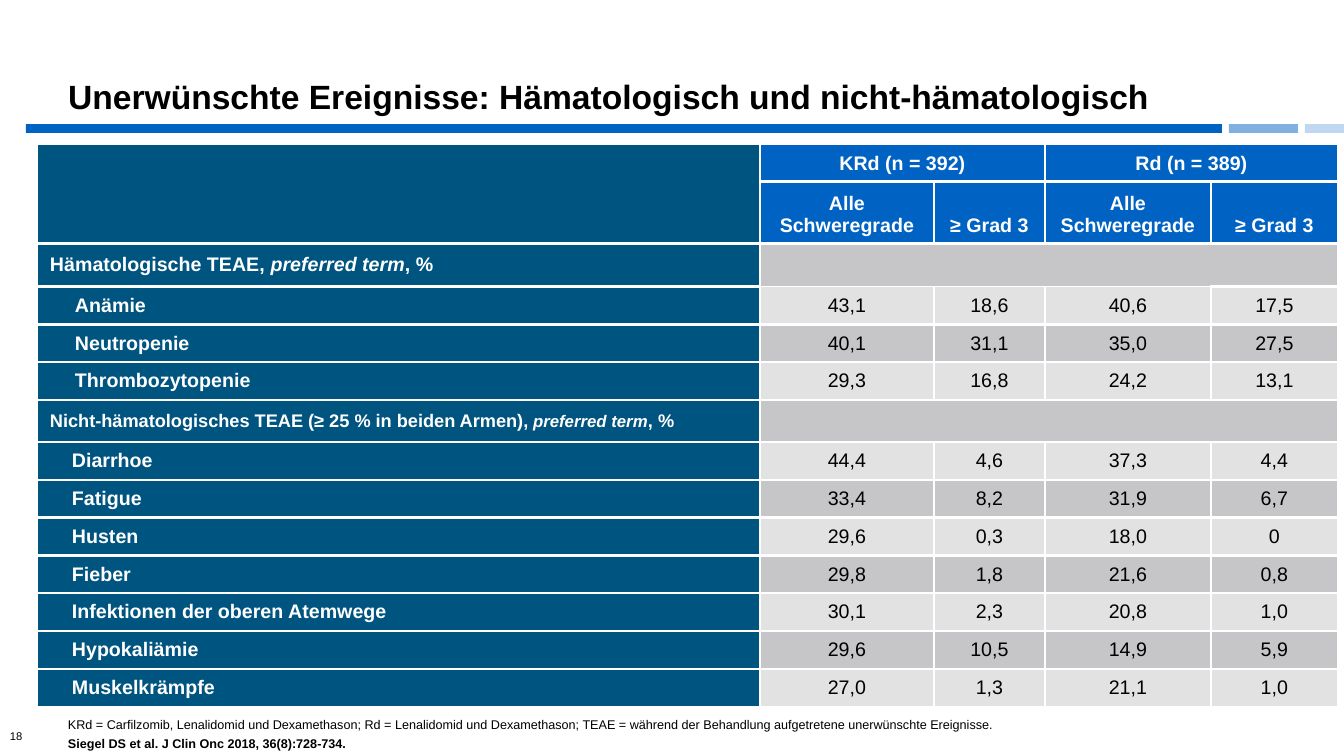
from pptx import Presentation
from pptx.dml.color import RGBColor
from pptx.enum.shapes import MSO_SHAPE
from pptx.enum.text import MSO_ANCHOR, PP_ALIGN
from pptx.oxml.ns import qn
from pptx.util import Emu, Pt
from lxml import etree

CENTER, LEFT = PP_ALIGN.CENTER, PP_ALIGN.LEFT
MIDDLE, BOTTOM = MSO_ANCHOR.MIDDLE, MSO_ANCHOR.BOTTOM
RECTANGLE = MSO_SHAPE.RECTANGLE

EMU_PER_INCH = 914400
PX_PER_INCH = 100.8
FONT = "Arial"
BLACK = RGBColor(0x00, 0x00, 0x00)
WHITE = RGBColor(0xFF, 0xFF, 0xFF)
BLUE = RGBColor(0x00, 0x63, 0xC3)
PETROL = RGBColor(0x00, 0x54, 0x80)
GREY = RGBColor(0xC6, 0xC5, 0xC7)
LIGHT_GREY = RGBColor(0xE3, 0xE2, 0xE3)

THICK, THIN = 2.25, 1
COLUMN_WIDTHS = [723, 174, 111, 166, 127]
ROW_HEIGHTS = [37, 62, 43, 38, 37, 38, 42, 38, 37, 38, 37, 38, 38, 38]
ARMS = ["KRd (n = 392)", "Rd (n = 389)"]
GRADES = ["Alle Schweregrade", "≥ Grad 3"]

# Each group: heading, heading size, size of the italic part, side inset, events
GROUPS = [
    ("Hämatologische TEAE, ", 14, 14, 13, [
        ("Anämie", "43,1", "18,6", "40,6", "17,5"),
        ("Neutropenie", "40,1", "31,1", "35,0", "27,5"),
        ("Thrombozytopenie", "29,3", "16,8", "24,2", "13,1"),
    ]),
    ("Nicht-hämatologisches TEAE (≥ 25 % in beiden Armen), ", 13, 12, 10, [
        ("Diarrhoe", "44,4", "4,6", "37,3", "4,4"),
        ("Fatigue", "33,4", "8,2", "31,9", "6,7"),
        ("Husten", "29,6", "0,3", "18,0", "0"),
        ("Fieber", "29,8", "1,8", "21,6", "0,8"),
        ("Infektionen der oberen Atemwege", "30,1", "2,3", "20,8", "1,0"),
        ("Hypokaliämie", "29,6", "10,5", "14,9", "5,9"),
        ("Muskelkrämpfe", "27,0", "1,3", "21,1", "1,0"),
    ]),
]


def px(length):
    return Emu(round(length * EMU_PER_INCH / PX_PER_INCH))


def format_span(span, size, color=BLACK, bold=False, italic=False):
    font = span.font
    font.name, font.size = FONT, Pt(size)
    font.bold, font.italic = bold, italic
    font.color.rgb = color


def add_bar(page, left, width, opacity):
    bar = page.shapes.add_shape(RECTANGLE, px(left), px(124), px(width), px(9))
    bar.shadow.inherit = False
    bar.fill.solid()
    bar.fill.fore_color.rgb = BLUE
    bar.line.fill.background()
    if opacity < 100:
        color = bar.fill._xPr.find(".//" + qn("a:srgbClr"))
        etree.SubElement(color, qn("a:alpha"), val=str(opacity * 1000))


def add_text(page, left, top, width, height, lines, size, anchor):
    """Add a text box; lines holds pairs of wording and boldness."""
    box = page.shapes.add_textbox(px(left), px(top), px(width), px(height))
    frame = box.text_frame
    frame.word_wrap = True
    frame.vertical_anchor = anchor
    frame.text = "\n".join(wording for wording, bold in lines)
    for para, (wording, bold) in zip(frame.paragraphs, lines):
        format_span(para.runs[0], size, bold=bold)
    return frame


def add_title(page, wording):
    title = page.shapes.title
    title.left, title.top, title.width, title.height = px(58), px(0), px(1235), px(122)
    frame = title.text_frame
    frame.text = wording
    frame.word_wrap = True
    frame.vertical_anchor = BOTTOM
    para = frame.paragraphs[0]
    para.alignment = LEFT
    para.line_spacing = 0.9
    format_span(para.runs[0], 24, bold=True)


def style_cell(cell, fill, top=THICK, bottom=THICK):
    """Give a cell its white borders and its fill."""
    properties = cell._tc.get_or_add_tcPr()
    for side, width in (("L", THICK), ("R", THICK), ("T", top), ("B", bottom)):
        line = etree.SubElement(properties, qn("a:ln" + side), w=str(Pt(width)))
        paint = etree.SubElement(line, qn("a:solidFill"))
        etree.SubElement(paint, qn("a:srgbClr"), val=str(WHITE))
    cell.fill.solid()
    cell.fill.fore_color.rgb = fill
    cell.margin_top = cell.margin_bottom = 0


def write_cell(cell, wording, inset=10, anchor=MIDDLE, align=CENTER, color=WHITE, bold=True):
    cell.margin_left = cell.margin_right = px(inset)
    cell.margin_top = cell.margin_bottom = px(7)
    cell.vertical_anchor = anchor
    cell.text = wording
    para = cell.text_frame.paragraphs[0]
    para.alignment = align
    format_span(para.runs[0], 14, color, bold)
    return para


def fill_header(table):
    for row in range(2):
        for column in range(5):
            style_cell(table.cell(row, column), BLUE if column else PETROL)
    table.cell(0, 0).merge(table.cell(1, 0))
    for index, arm in enumerate(ARMS):
        first = 1 + 2 * index
        table.cell(0, first).merge(table.cell(0, first + 1))
        write_cell(table.cell(0, first), arm, anchor=BOTTOM)
        for offset, grade in enumerate(GRADES):
            write_cell(table.cell(1, first + offset), grade, inset=13, anchor=BOTTOM)


def fill_heading(table, row, wording, size, italic_size):
    for column in range(5):
        style_cell(table.cell(row, column), GREY if column else PETROL,
                   bottom=THIN if column else THICK)
    table.cell(row, 1).merge(table.cell(row, 4))
    para = write_cell(table.cell(row, 0), wording, inset=13, align=LEFT)
    para.runs[0].font.size = Pt(size)
    for part, part_size, italic in (("preferred term", italic_size, True), (", %", size, False)):
        span = para.add_run()
        span.text = part
        format_span(span, part_size, WHITE, True, italic)


def fill_event(table, row, event, position, inset):
    """Write one adverse event; position counts from the group heading."""
    shade = GREY if position % 2 else LIGHT_GREY
    for column, wording in enumerate(event):
        cell = table.cell(row, column)
        below_heading = position == 0 and column in (1, 2, 3)
        style_cell(cell, shade if column else PETROL, top=THIN if below_heading else THICK)
        if column:
            write_cell(cell, wording, color=BLACK, bold=False)
        else:
            para = write_cell(cell, wording, inset=inset, align=LEFT)
            para.level = 1
            properties = para._p.get_or_add_pPr()
            properties.set("marL", str(px(25)))
            properties.set("indent", "0")


def add_event_table(page):
    table = page.shapes.add_table(len(ROW_HEIGHTS), len(COLUMN_WIDTHS), px(37), px(144),
                                  px(sum(COLUMN_WIDTHS)), px(sum(ROW_HEIGHTS))).table
    table.first_row = table.horz_banding = False
    for column, width in zip(table.columns, COLUMN_WIDTHS):
        column.width = px(width)
    for row, height in zip(table.rows, ROW_HEIGHTS):
        row.height = px(height)
    fill_header(table)
    row = 2
    for wording, size, italic_size, inset, events in GROUPS:
        fill_heading(table, row, wording, size, italic_size)
        for position, event in enumerate(events):
            fill_event(table, row + 1 + position, event, position, inset)
        row += 1 + len(events)


def main():
    deck = Presentation()
    deck.slide_width, deck.slide_height = px(1344), px(756)
    page = deck.slides.add_slide(deck.slide_layouts[5])
    add_text(page, 0, 724, 68, 24, [("18", False)], 8, MIDDLE)
    for left, width, opacity in ((26, 1196, 100), (1229, 69, 50), (1305, 39, 25)):
        add_bar(page, left, width, opacity)
    add_event_table(page)
    add_title(page, "Unerwünschte Ereignisse: Hämatologisch und nicht-hämatologisch")
    footnote = add_text(page, 58, 711, 1114, 45, [
        ("KRd = Carfilzomib, Lenalidomid und Dexamethason; Rd = Lenalidomid und Dexamethason; "
         "TEAE = während der Behandlung aufgetretene unerwünschte Ereignisse.", False),
        ("Siegel DS et al. J Clin Onc 2018, 36(8):728-734.", True),
    ], 9, BOTTOM)
    footnote.paragraphs[0].space_after = Pt(3)
    deck.save("out.pptx")


if __name__ == "__main__":
    main()
